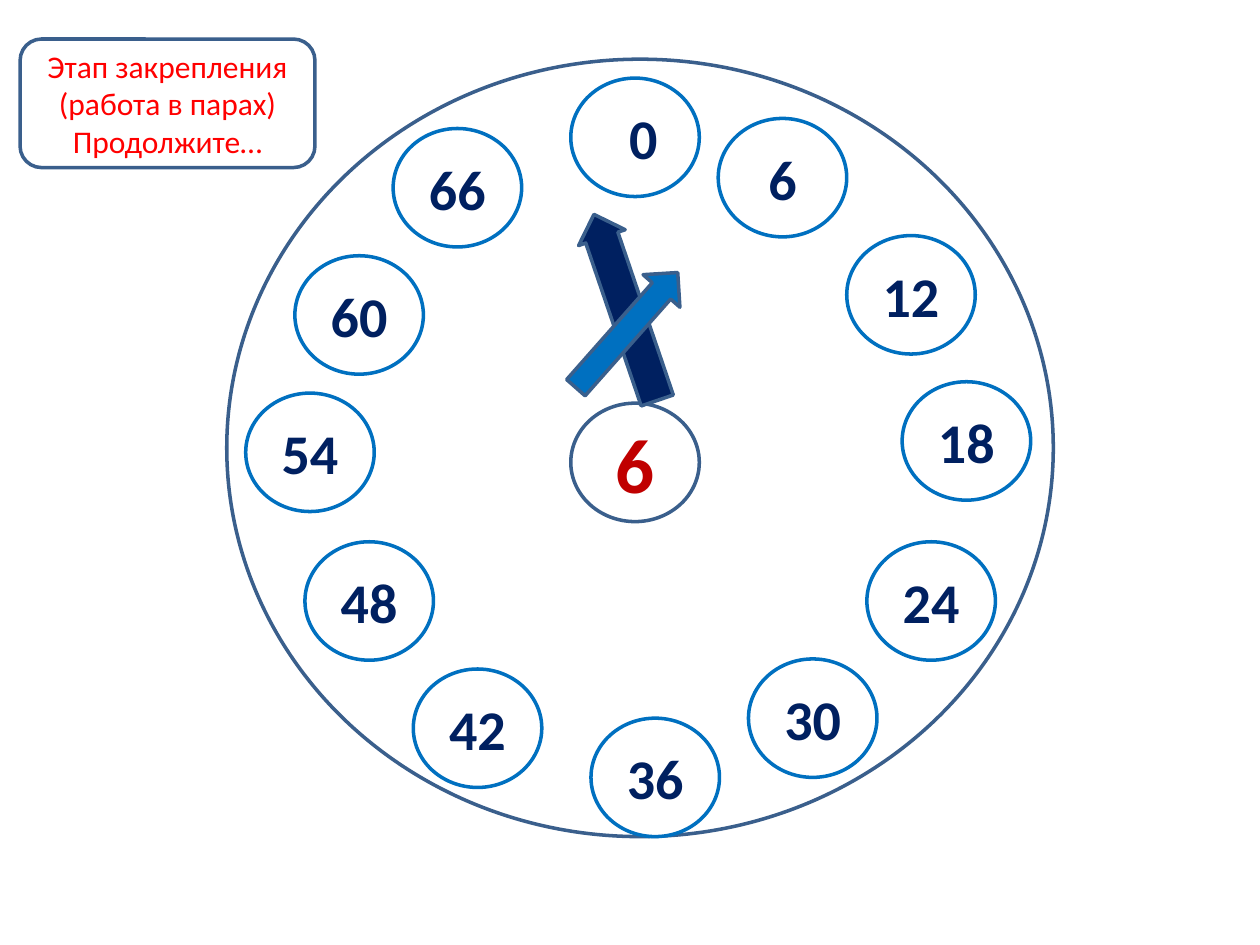
from pptx import Presentation
from pptx.dml.color import RGBColor
from pptx.enum.shapes import MSO_SHAPE
from pptx.enum.text import MSO_ANCHOR, PP_ALIGN
from pptx.util import Inches, Pt

COLORS = {
    "white": "FFFFFF",
    "outline": "3A5F8C",
    "blue": "0070C0",
    "navy": "002060",
    "crimson": "C00000",
    "red": "FF0000",
}

presentation = Presentation()
presentation.slide_width = Inches(10)
presentation.slide_height = Inches(7.5)
slide = presentation.slides.add_slide(presentation.slide_layouts[6])

# Grid of 100 columns and 75 rows
COLUMN = presentation.slide_width / 100
ROW = presentation.slide_height / 75


def add_figure(kind, left, top, width, height, fill="white", line="outline"):
    shape = slide.shapes.add_shape(
        kind, int(left * COLUMN), int(top * ROW), int(width * COLUMN), int(height * ROW)
    )
    shape.shadow.inherit = False
    shape.fill.solid()
    shape.fill.fore_color.rgb = RGBColor.from_string(COLORS[fill])
    shape.line.color.rgb = RGBColor.from_string(COLORS[line])
    shape.line.width = Pt(2)
    return shape


def write_text(shape, text, size=18, color="navy", bold=False):
    frame = shape.text_frame
    frame.word_wrap = True
    frame.vertical_anchor = MSO_ANCHOR.MIDDLE
    frame.text = text
    for paragraph in frame.paragraphs:
        paragraph.alignment = PP_ALIGN.CENTER
        font = paragraph.font
        font.name = "Calibri"
        font.size = Pt(size)
        font.bold = bold
        font.color.rgb = RGBColor.from_string(COLORS[color])


# Clock face
add_figure(MSO_SHAPE.OVAL, 18, 4.7, 65.6, 61.7)

# Multiples of the central number, clockwise from the top
FACTOR = 6
NUMBER_SIZE = (10.2, 9.4)
number_positions = [
    (45.3, 6.2), (57, 9.4), (67.2, 18.7), (71.6, 30.3),
    (68.8, 43), (59.4, 52.3), (46.9, 57), (32.8, 53.1),
    (24.2, 43), (19.5, 31.2), (23.4, 20.3), (31.2, 10.2),
]
for index, (left, top) in enumerate(number_positions):
    circle = add_figure(MSO_SHAPE.OVAL, left, top, *NUMBER_SIZE, line="blue")
    write_text(circle, str(index * FACTOR), size=32, bold=True)
    if index == 0:
        # The zero sits slightly right of centre
        circle.text_frame.margin_left = Inches(0.23)

# Central number
center = add_figure(MSO_SHAPE.OVAL, 45.3, 32, *NUMBER_SIZE)
write_text(center, str(FACTOR), size=44, color="crimson", bold=True)

# Clock hands
long_hand = add_figure(MSO_SHAPE.UP_ARROW, 47.7, 16.6, 3.9, 15.6, fill="navy")
long_hand.rotation = 341.2
long_hand.adjustments[0] = 0.69
short_hand = add_figure(MSO_SHAPE.UP_ARROW, 47.8, 20.1, 3.9, 12.2, fill="blue")
short_hand.rotation = 41.5

# Stage label
label = add_figure(MSO_SHAPE.ROUNDED_RECTANGLE, 1.6, 3.1, 23.4, 10.2)
write_text(label, "Этап закрепления\n(работа в парах)\nПродолжите…", color="red")

presentation.save("out.pptx")
